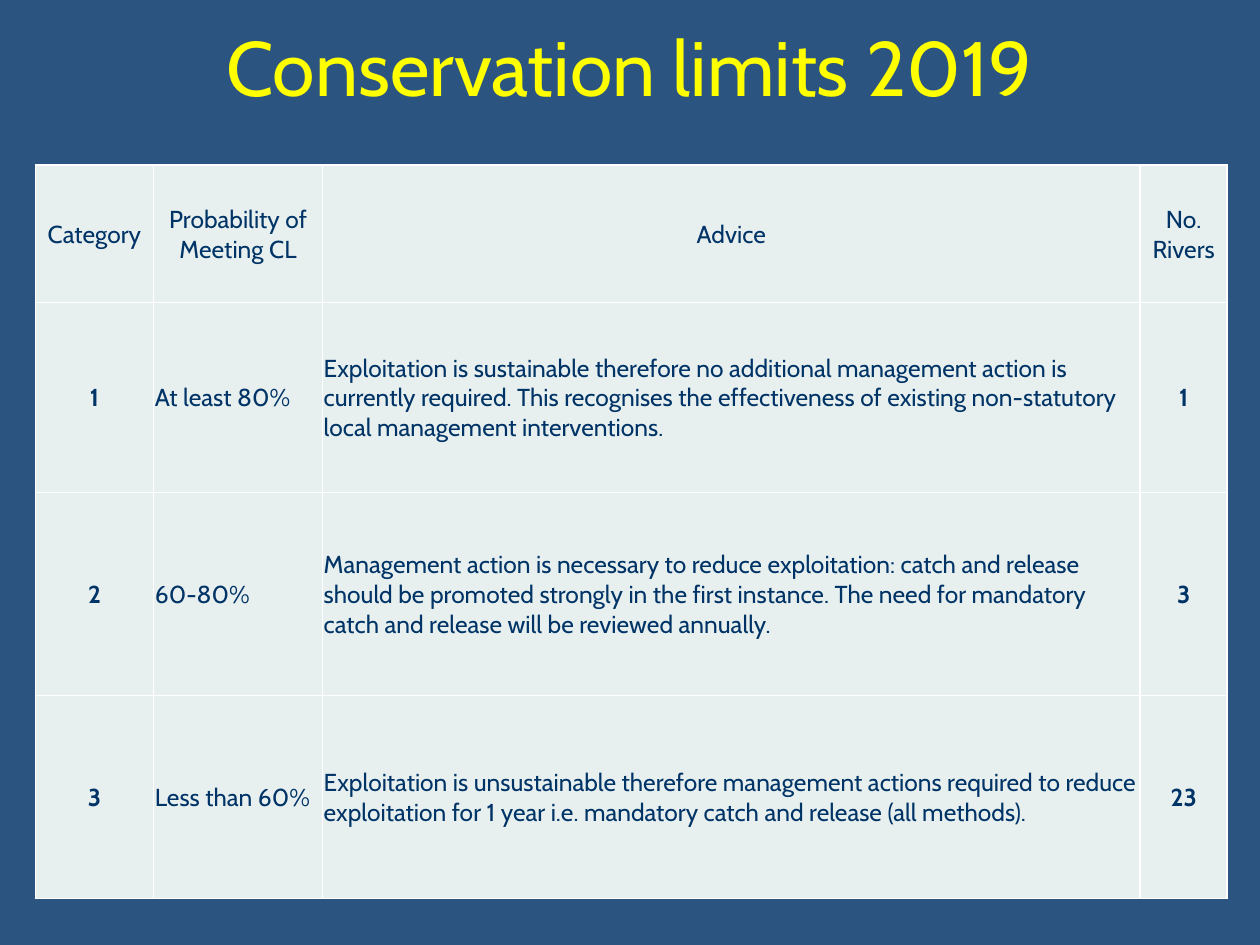
from lxml.etree import SubElement
from pptx import Presentation
from pptx.dml.color import RGBColor
from pptx.enum.text import MSO_ANCHOR, PP_ALIGN
from pptx.oxml.ns import qn
from pptx.util import Inches, Pt

TITLE = "Conservation limits 2019"
ROWS = [
    ("Category", "Probability of Meeting CL", "Advice", "No. Rivers"),
    ("1", "At least 80%",
     "Exploitation is sustainable therefore no additional management action is "
     "currently required. This recognises the effectiveness of existing "
     "non-statutory local management interventions.", "1"),
    ("2", "60-80%",
     "Management action is necessary to reduce exploitation: catch and release "
     "should be promoted strongly in the first instance. The need for mandatory "
     "catch and release will be reviewed annually.", "3"),
    ("3", "Less than 60%",
     "Exploitation is unsustainable therefore management actions required to "
     "reduce exploitation for 1 year i.e. mandatory catch and release "
     "(all methods).", "23"),
]
WIDTHS = [0.94, 1.34, 6.49, 0.69]
HEIGHTS = [1.09, 1.51, 1.61, 1.61]
COUNTS = (0, 3)  # columns of bold, centred numbers

FONT = "Cabin"
BLUE = RGBColor(0x2B, 0x54, 0x81)
NAVY = RGBColor(0x00, 0x33, 0x66)
PALE = RGBColor(0xE7, 0xEF, 0xEF)
YELLOW = RGBColor(0xFF, 0xFF, 0x00)
WHITE = RGBColor(0xFF, 0xFF, 0xFF)


def write(frame, text, size=14, color=NAVY, bold=False, align=PP_ALIGN.CENTER):
    frame.word_wrap = True
    para = frame.paragraphs[0]
    para.alignment = align
    run = para.add_run()
    run.text = text
    font = run.font
    font.name, font.size, font.bold = FONT, Pt(size), bold
    font.color.rgb = color


def border(cell, color=WHITE, width=1):
    props = cell._tc.get_or_add_tcPr()
    for side in ("lnL", "lnR", "lnT", "lnB"):
        line = SubElement(props, qn(f"a:{side}"), w=str(Pt(width)))
        fill = SubElement(line, qn("a:solidFill"))
        SubElement(fill, qn("a:srgbClr"), val=str(color))


def add_title(slide):
    box = slide.shapes.add_textbox(Inches(0.5), Inches(0.13), Inches(9), Inches(0.79))
    box.text_frame.vertical_anchor = MSO_ANCHOR.MIDDLE
    write(box.text_frame, TITLE, size=44, color=YELLOW)


def add_limits(slide):
    table = slide.shapes.add_table(
        len(ROWS), len(WIDTHS), Inches(0.28), Inches(1.31),
        Inches(sum(WIDTHS)), Inches(sum(HEIGHTS))).table
    table.horz_banding = False
    for col, width in zip(table.columns, WIDTHS):
        col.width = Inches(width)
    for row, height in zip(table.rows, HEIGHTS):
        row.height = Inches(height)
    for r, texts in enumerate(ROWS):
        for c, text in enumerate(texts):
            cell = table.cell(r, c)
            cell.margin_left = cell.margin_right = cell.margin_top = Inches(0.01)
            cell.margin_bottom = 0
            cell.vertical_anchor = MSO_ANCHOR.MIDDLE
            border(cell)
            cell.fill.solid()
            cell.fill.fore_color.rgb = PALE
            mid = r == 0 or c in COUNTS
            write(cell.text_frame, text, bold=r > 0 and c in COUNTS,
                  align=PP_ALIGN.CENTER if mid else PP_ALIGN.LEFT)


def main():
    deck = Presentation()
    deck.slide_width, deck.slide_height = Inches(10), Inches(7.5)
    slide = deck.slides.add_slide(deck.slide_layouts[6])
    slide.background.fill.solid()
    slide.background.fill.fore_color.rgb = BLUE
    add_title(slide)
    add_limits(slide)
    deck.save("out.pptx")


if __name__ == "__main__":
    main()
